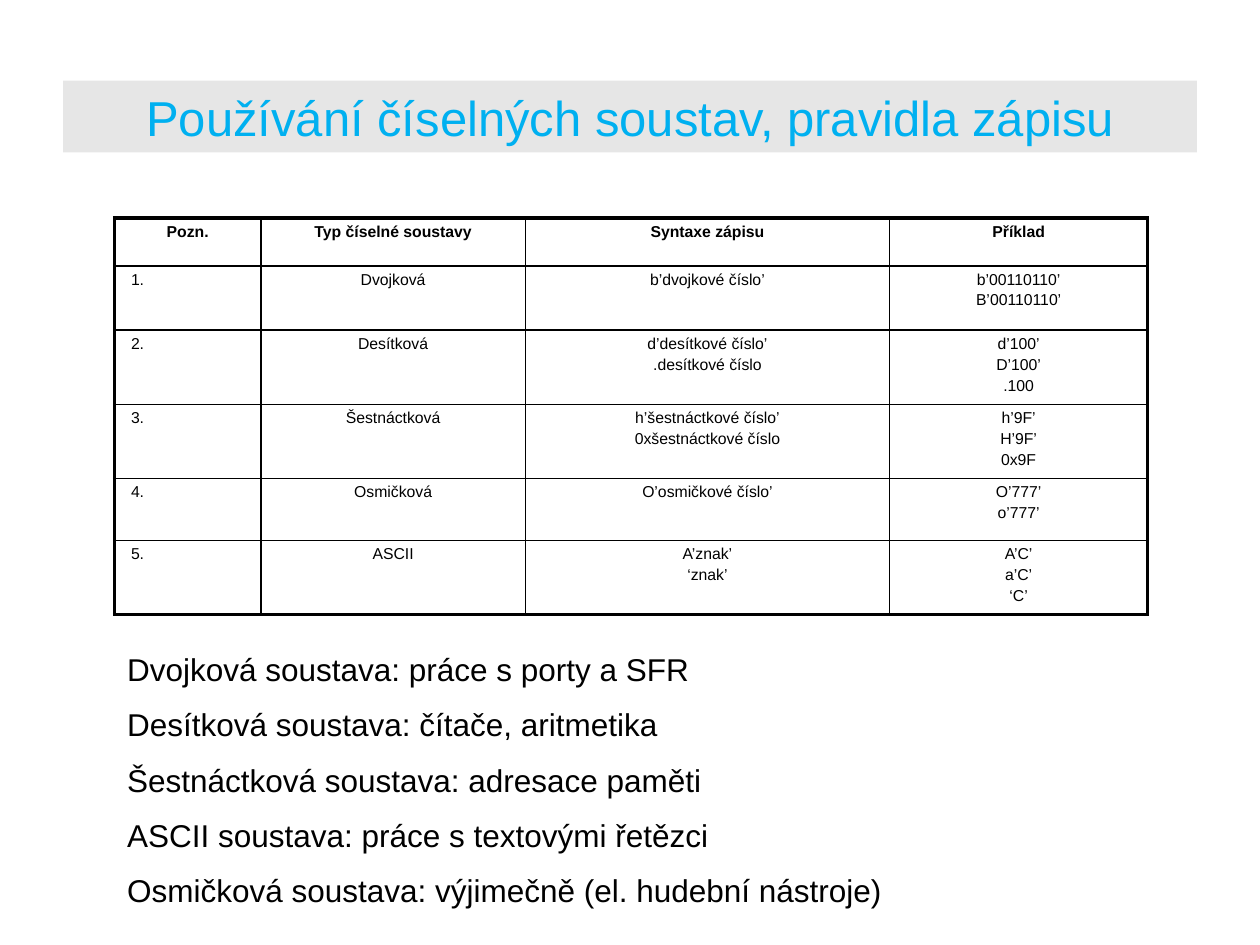
from dataclasses import dataclass

from lxml import etree
from pptx import Presentation
from pptx import util as u
from pptx.dml.color import RGBColor
from pptx.enum import text
from pptx.oxml import ns

BLACK = RGBColor(0x00, 0x00, 0x00)
SKY = RGBColor(0x00, 0xB0, 0xF0)
PALE_GREY = RGBColor(0xE6, 0xE6, 0xE6)
FONT = "Arial"
CENTER, LEFT = text.PP_ALIGN.CENTER, text.PP_ALIGN.LEFT
OUTER_LINE, INNER_LINE = u.Pt(2.25), u.Pt(1)


@dataclass
class Style:
    size: float
    color: RGBColor = BLACK
    bold: bool = False
    align: text.PP_ALIGN = LEFT
    space_before: float = 0


@dataclass
class NumberSystem:
    name: str
    syntax: list[str]
    examples: list[str]


TITLE = "Používání číselných soustav, pravidla zápisu"
HEADINGS = ["Pozn.", "Typ číselné soustavy", "Syntaxe zápisu", "Příklad"]
SYSTEMS = [
    NumberSystem("Dvojková", ["b’dvojkové číslo’"], ["b’00110110’", "B’00110110’"]),
    NumberSystem("Desítková", ["d’desítkové číslo’", ".desítkové číslo"],
                 ["d’100’", "D’100’", ".100"]),
    NumberSystem("Šestnáctková", ["h’šestnáctkové číslo’", "0xšestnáctkové číslo"],
                 ["h’9F’", "H’9F’", "0x9F"]),
    NumberSystem("Osmičková", ["O’osmičkové číslo’"], ["O’777’", "o’777’"]),
    NumberSystem("ASCII", ["A’znak’", "‘znak’"], ["A’C’", "a’C’", "‘C’"]),
]
USES = [
    "Dvojková soustava: práce s porty a SFR",
    "Desítková soustava: čítače, aritmetika",
    "Šestnáctková soustava: adresace paměti",
    "ASCII soustava: práce s textovými řetězci",
    "Osmičková soustava: výjimečně (el. hudební nástroje)",
]
COLUMN_WIDTHS = [1.16, 2.1, 2.89, 2.05]
ROW_HEIGHTS = [0.38, 0.51, 0.59, 0.59, 0.49, 0.59]


def place(shape, left: float, top: float, width: float, height: float) -> None:
    shape.left, shape.top = u.Inches(left), u.Inches(top)
    shape.width, shape.height = u.Inches(width), u.Inches(height)


def write(frame, lines: list[str], style: Style) -> None:
    """Fill a text frame with one styled paragraph per line."""
    for index, line in enumerate(lines):
        para = frame.add_paragraph() if index else frame.paragraphs[0]
        para.alignment = style.align
        para.space_before = u.Pt(style.space_before)
        span = para.add_run()
        span.text = line
        span.font.name, span.font.size = FONT, u.Pt(style.size)
        span.font.bold = style.bold
        span.font.color.rgb = style.color


def remove_bullet(para) -> None:
    properties = para._p.get_or_add_pPr()
    properties.set("marL", "0")
    properties.set("indent", "0")
    etree.SubElement(properties, ns.qn("a:buNone"))


def draw_border(cell, side: str, width: int) -> None:
    line = etree.SubElement(cell._tc.get_or_add_tcPr(), ns.qn(f"a:ln{side}"), w=str(width))
    fill = etree.SubElement(line, ns.qn("a:solidFill"))
    etree.SubElement(fill, ns.qn("a:srgbClr"), val=str(BLACK))


def add_title(slide) -> None:
    title = slide.shapes.title
    place(title, 0.5, 0.64, 9, 0.57)
    title.fill.solid()
    title.fill.fore_color.rgb = PALE_GREY
    title.text_frame.auto_size = text.MSO_AUTO_SIZE.NONE
    title.text_frame.vertical_anchor = text.MSO_ANCHOR.MIDDLE
    write(title.text_frame, [TITLE], Style(28, SKY, align=CENTER))


def add_syntax_table(slide) -> None:
    rows = [[[heading] for heading in HEADINGS]]
    rows += [[[f"{number}."], [system.name], system.syntax, system.examples]
             for number, system in enumerate(SYSTEMS, 1)]
    last_row, last_column = len(rows) - 1, len(HEADINGS) - 1
    table = slide.shapes.add_table(
        len(rows), len(HEADINGS), u.Inches(0.91), u.Inches(1.73),
        u.Inches(sum(COLUMN_WIDTHS)), u.Inches(sum(ROW_HEIGHTS))).table
    table.horz_banding = False
    for column, width in zip(table.columns, COLUMN_WIDTHS):
        column.width = u.Inches(width)
    for row, height in zip(table.rows, ROW_HEIGHTS):
        row.height = u.Inches(height)

    for r, row in enumerate(rows):
        for c, lines in enumerate(row):
            cell = table.cell(r, c)
            cell.margin_left = cell.margin_right = u.Inches(0.13)
            cell.margin_top = cell.margin_bottom = u.Inches(0.04)
            on_edge = {"L": c == 0, "R": c == last_column, "T": r == 0, "B": r == last_row}
            for side, outer in on_edge.items():
                draw_border(cell, side, OUTER_LINE if outer else INNER_LINE)
            cell.fill.background()
            align = LEFT if r and c == 0 else CENTER
            write(cell.text_frame, lines,
                  Style(9, bold=r == 0, align=align, space_before=1.8))


def add_uses(slide) -> None:
    body = slide.placeholders[1]
    place(body, 0.91, 5.11, 8.4, 2.22)
    body.text_frame.auto_size = text.MSO_AUTO_SIZE.NONE
    body.text_frame.vertical_anchor = text.MSO_ANCHOR.TOP
    write(body.text_frame, USES, Style(18, space_before=10))
    for para in body.text_frame.paragraphs:
        remove_bullet(para)


def main() -> None:
    deck = Presentation()
    deck.slide_width, deck.slide_height = u.Inches(10), u.Inches(7.5)
    page = deck.slides.add_slide(deck.slide_layouts[1])
    add_title(page)
    add_syntax_table(page)
    add_uses(page)
    deck.save("out.pptx")


if __name__ == "__main__":
    main()
